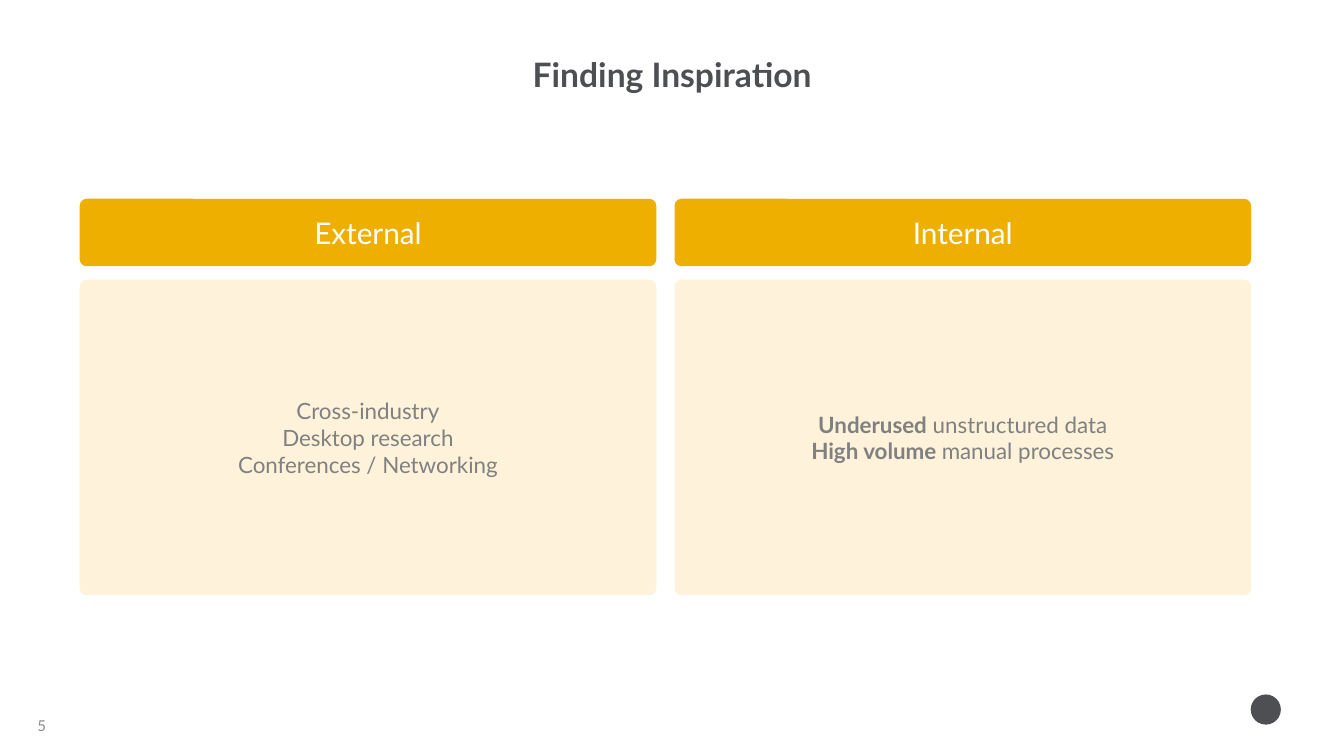
from dataclasses import dataclass

from pptx import Presentation
from pptx.dml.color import RGBColor
from pptx.enum import shapes, text
from pptx.util import Cm, Pt


@dataclass(frozen=True)
class Theme:
    font: str = "Lato"
    dark: str = "4D4F53"
    gold: str = "EEAF00"
    cream: str = "FEF3DA"
    white: str = "FFFFFF"
    gray: str = "808080"
    pale: str = "8C8C8C"
    title: float = 24
    head: float = 21.3
    body: float = 16
    small: float = 10.7


theme = Theme()


def write(frame, lines, size, color, align=text.PP_ALIGN.CENTER):
    """Fill a text frame; each line is a list of (words, bold) runs."""
    frame.word_wrap = True
    for i, line in enumerate(lines):
        para = frame.add_paragraph() if i else frame.paragraphs[0]
        para.alignment = align
        for words, bold in line:
            run = para.add_run()
            run.text = words
            run.font.name = theme.font
            run.font.size = Pt(size)
            run.font.bold = bold
            run.font.color.rgb = RGBColor.from_string(color)


def block(kind, left, top, width, height, color):
    """Add a flat filled shape without an outline."""
    shape = slide.shapes.add_shape(kind, Cm(left), Cm(top), Cm(width), Cm(height))
    shape.shadow.inherit = False
    shape.fill.solid()
    shape.fill.fore_color.rgb = RGBColor.from_string(color)
    shape.line.fill.background()
    return shape


deck = Presentation()
deck.slide_width, deck.slide_height = Cm(33.87), Cm(19.05)
slide = deck.slides.add_slide(deck.slide_layouts[5])

# Plain mark in the corner
block(shapes.MSO_SHAPE.OVAL, 31.52, 17.5, 0.76, 0.76, theme.dark)

# Title
title = slide.shapes.title
title.left, title.top, title.width, title.height = Cm(1.7), Cm(1.47), Cm(30.48), Cm(3.18)
frame = title.text_frame
frame.margin_left = frame.margin_right = frame.margin_top = frame.margin_bottom = 0
frame.vertical_anchor = text.MSO_ANCHOR.TOP
write(frame, [[("Finding Inspiration", True)]], theme.title, theme.dark)
frame.paragraphs[0].line_spacing = 0.9

# Page number
page = slide.shapes.add_textbox(Cm(0.69), Cm(17.96), Cm(7.9), Cm(0.64))
page.text_frame.vertical_anchor = text.MSO_ANCHOR.MIDDLE
write(page.text_frame, [[("5", False)]], theme.small, theme.pale, text.PP_ALIGN.LEFT)

# Two columns, each a heading above a card
columns = [
    ("External", [
        [("Cross-industry", False)],
        [("Desktop research", False)],
        [("Conferences / Networking", False)],
    ]),
    ("Internal", [
        [("Underused", True), (" unstructured data", False)],
        [("High volume ", True), ("manual processes", False)],
    ]),
]
left, wide, gap, round_by = 2.01, 14.53, 0.46, 0.175

for i, (head, lines) in enumerate(columns):
    x = left + i * (wide + gap)
    rows = [
        (5.01, 1.7, theme.gold, [[(head, False)]], theme.head, theme.white),
        (7.05, 7.95, theme.cream, lines, theme.body, theme.gray),
    ]
    for top, high, fill, words, size, color in rows:
        card = block(shapes.MSO_SHAPE.ROUNDED_RECTANGLE, x, top, wide, high, fill)
        card.adjustments[0] = round_by / high
        card.text_frame.vertical_anchor = text.MSO_ANCHOR.MIDDLE
        write(card.text_frame, words, size, color)

deck.save("out.pptx")
